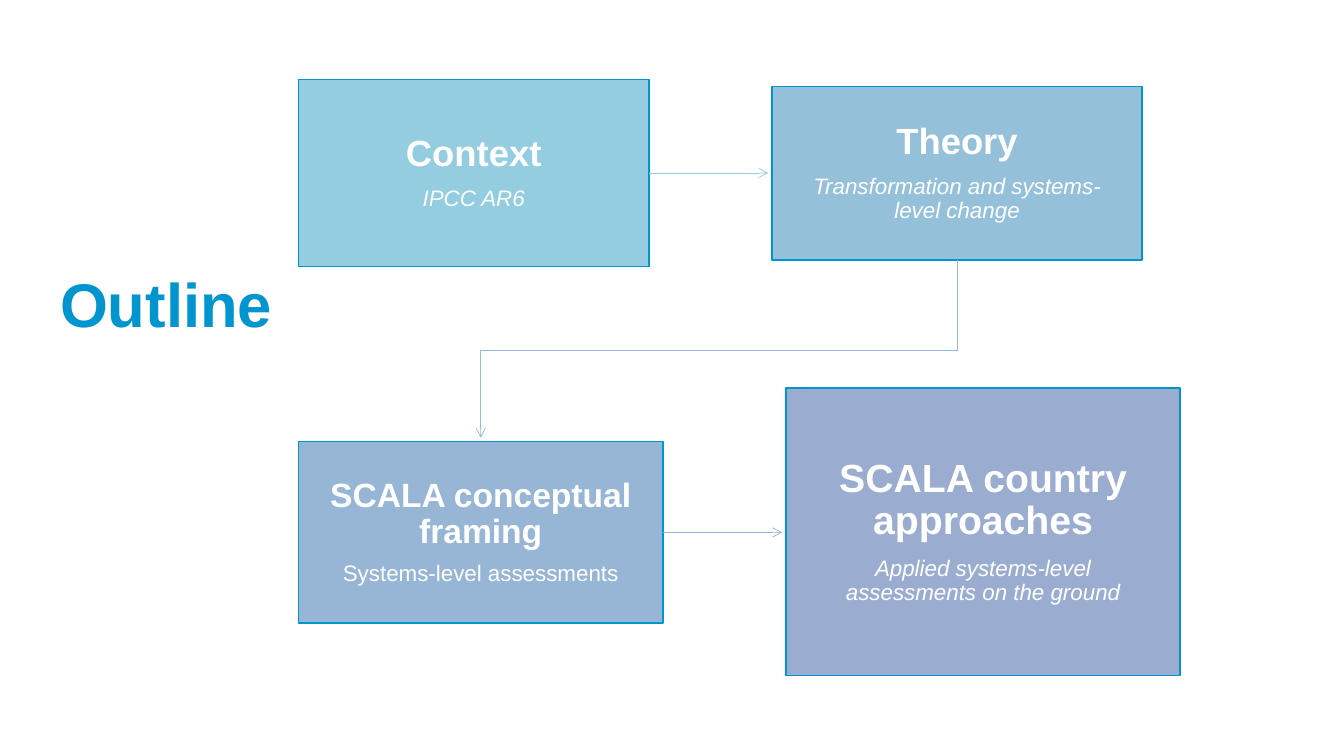
from dataclasses import dataclass

from lxml.etree import SubElement
from pptx import Presentation
from pptx.dml.color import RGBColor
from pptx.enum.shapes import MSO_CONNECTOR, MSO_SHAPE
from pptx.enum.text import MSO_ANCHOR, PP_ALIGN
from pptx.oxml.ns import qn
from pptx.shapes.autoshape import Shape
from pptx.shapes.base import BaseShape
from pptx.shapes.shapetree import SlideShapes
from pptx.text.text import TextFrame, _Paragraph
from pptx.util import Cm, Pt


@dataclass(frozen=True)
class Theme:
    font: str = "Arial"
    paper: str = "FEFFFE"
    accent: str = "0095CE"
    bend: str = "96BAD7"
    title_size: int = 44
    detail_size: int = 16
    border: float = 1
    arrow: float = 0.5


@dataclass(frozen=True)
class Topic:
    """A box of the outline, with lengths in centimetres."""
    heading: str
    detail: str
    left: float
    top: float
    width: float
    height: float
    fill: str
    heading_size: int
    italic: bool = True

    @property
    def middle(self) -> float:
        return self.left + self.width / 2

    @property
    def bottom(self) -> float:
        return self.top + self.height


THEME = Theme()
BOTTOM, RIGHT = 2, 3
ARROW_GAP = 0.1

CONTEXT = Topic("Context", "IPCC AR6", 7.52, 2.01, 8.84, 4.7, "93CDDF", 26)
THEORY = Topic("Theory", "Transformation and systems-level change",
               19.46, 2.18, 9.32, 4.37, "95C0DA", 26)
FRAMING = Topic("SCALA conceptual framing", "Systems-level assessments",
                7.52, 11.13, 9.19, 4.57, "97B5D5", 24, italic=False)
APPROACHES = Topic("SCALA country approaches", "Applied systems-level assessments on the ground",
                   19.81, 9.78, 9.93, 7.24, "9AACCF", 28)


def rgb(colour: str) -> RGBColor:
    return RGBColor.from_string(colour)


def write(paragraph: _Paragraph, text: str, size: int, colour: str,
          bold: bool = True, italic: bool = False) -> None:
    paragraph.text = text
    paragraph.alignment = PP_ALIGN.CENTER
    paragraph.line_spacing = 0.9
    style = {"name": THEME.font, "size": Pt(size), "bold": bold, "italic": italic}
    for attribute, value in style.items():
        setattr(paragraph.font, attribute, value)
    paragraph.font.color.rgb = rgb(colour)


def space_after_percent(paragraph: _Paragraph, percent: int) -> None:
    """Set space after relative to the text size; call it after line spacing is set."""
    spacing = SubElement(paragraph._p.get_or_add_pPr(), qn("a:spcAft"))
    SubElement(spacing, qn("a:spcPct")).set("val", str(percent * 1000))


def set_frame(frame: TextFrame, inset: float, anchor: MSO_ANCHOR) -> None:
    layout = {"word_wrap": True, "vertical_anchor": anchor}
    layout |= {f"margin_{side}": Cm(inset) for side in ("left", "top", "right", "bottom")}
    for attribute, value in layout.items():
        setattr(frame, attribute, value)


def draw_topic(shapes: SlideShapes, topic: Topic) -> Shape:
    box = shapes.add_shape(MSO_SHAPE.RECTANGLE, Cm(topic.left), Cm(topic.top),
                           Cm(topic.width), Cm(topic.height))
    box.shadow.inherit = False
    box.fill.solid()
    box.fill.fore_color.rgb = rgb(topic.fill)
    box.line.color.rgb = rgb(THEME.accent)
    box.line.width = Pt(THEME.border)

    frame = box.text_frame
    set_frame(frame, 0.02 * topic.heading_size, MSO_ANCHOR.MIDDLE)
    heading, detail = frame.paragraphs[0], frame.add_paragraph()
    write(heading, topic.heading, topic.heading_size, THEME.paper)
    write(detail, topic.detail, THEME.detail_size, THEME.paper, bold=False, italic=topic.italic)
    for paragraph in (heading, detail):
        space_after_percent(paragraph, 35)
    return box


def style_arrow(arrow: BaseShape, colour: str) -> None:
    arrow.line.color.rgb = rgb(colour)
    arrow.line.width = Pt(THEME.arrow)
    SubElement(arrow.line._get_or_add_ln(), qn("a:tailEnd")).set("type", "arrow")


def draw_row_arrow(shapes: SlideShapes, source: Shape, target: Topic, colour: str) -> None:
    """Point from the right side of a box to just before the next box in its row."""
    arrow = shapes.add_connector(MSO_CONNECTOR.STRAIGHT, 0, 0, 0, 0)
    arrow.begin_connect(source, RIGHT)
    arrow.end_x, arrow.end_y = Cm(target.left - ARROW_GAP), arrow.begin_y
    style_arrow(arrow, colour)
    SubElement(arrow._element.spPr, qn("a:effectLst"))


def draw_bent_arrow(shapes: SlideShapes, source: Topic, target: Topic, colour: str) -> None:
    """Lead from the bottom of a box to the top of one in the next row."""
    turn = (source.bottom + target.top) / 2
    corners = [(source.middle, turn), (target.middle, turn),
               (target.middle, target.top - ARROW_GAP)]
    builder = shapes.build_freeform(Cm(source.middle), Cm(source.bottom))
    builder.add_line_segments([(Cm(x), Cm(y)) for x, y in corners], close=False)
    arrow = builder.convert_to_shape()
    arrow.shadow.inherit = False
    arrow.fill.background()
    style_arrow(arrow, colour)


def draw_title(shapes: SlideShapes) -> None:
    title = shapes.add_textbox(Cm(0), Cm(7.06), Cm(8.38), Cm(1.65))
    set_frame(title.text_frame, 0.13, MSO_ANCHOR.BOTTOM)
    write(title.text_frame.paragraphs[0], "Outline", THEME.title_size, THEME.accent)


def main() -> None:
    deck = Presentation()
    deck.slide_width, deck.slide_height = Cm(33.87), Cm(19.05)
    slide = deck.slides.add_slide(deck.slide_layouts[6])
    slide.background.fill.solid()
    slide.background.fill.fore_color.rgb = rgb(THEME.paper)

    for first, second, colour in ((CONTEXT, THEORY, CONTEXT.fill),
                                  (FRAMING, APPROACHES, APPROACHES.fill)):
        source = draw_topic(slide.shapes, first)
        draw_topic(slide.shapes, second)
        draw_row_arrow(slide.shapes, source, second, colour)
    draw_bent_arrow(slide.shapes, THEORY, FRAMING, THEME.bend)
    draw_title(slide.shapes)
    deck.save("out.pptx")


if __name__ == "__main__":
    main()
